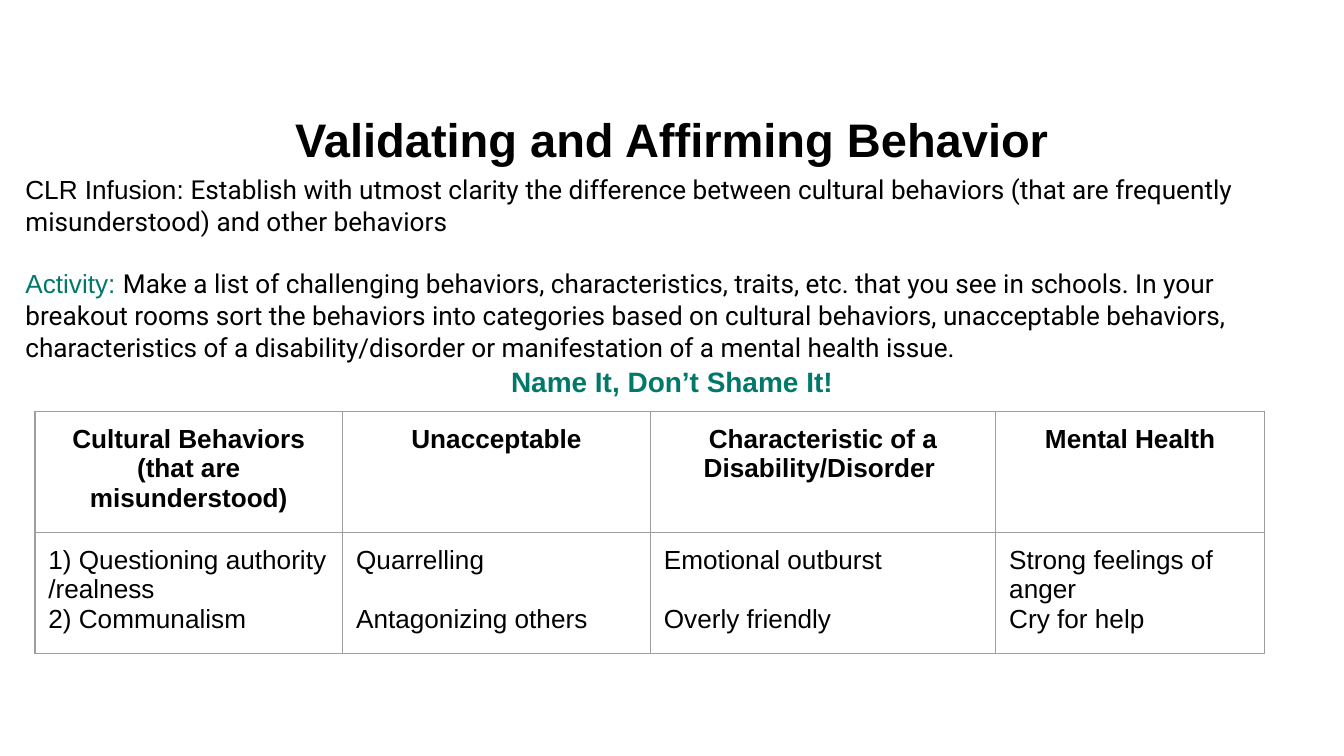
from lxml import etree
from pptx import Presentation
from pptx.dml.color import RGBColor
from pptx.enum.text import MSO_ANCHOR, MSO_AUTO_SIZE, PP_ALIGN
from pptx.oxml.ns import qn
from pptx.util import Inches, Pt

LEFT, MID = PP_ALIGN.LEFT, PP_ALIGN.CENTER
TOP = MSO_ANCHOR.TOP
FIXED = MSO_AUTO_SIZE.NONE
BLACK, TEAL, GREY = "000000", "00796B", "9E9E9E"
PAD = Inches(0.1)


def add_run(para, text, size=14, font="Arial", hue=BLACK, bold=False):
    run = para.add_run()
    run.text = text
    run.font.size, run.font.name, run.font.bold = Pt(size), font, bold
    run.font.color.rgb = RGBColor.from_string(hue)


def set_frame(frame):
    frame.word_wrap = True
    frame.auto_size = FIXED
    frame.vertical_anchor = TOP
    frame.margin_left = frame.margin_right = PAD
    frame.margin_top = frame.margin_bottom = PAD


deck = Presentation()
wide = Inches(10)
high = wide * 9 // 16
deck.slide_width, deck.slide_height = wide, high
slide = deck.slides.add_slide(deck.slide_layouts[5])

title = slide.shapes.title
title.left, title.width = Inches(0.34), Inches(9.32)
title.top, title.height = Inches(0.72), Inches(0.63)
set_frame(title.text_frame)
para = title.text_frame.paragraphs[0]
para.alignment = MID
add_run(para, "Validating and Affirming Behavior", 25.2, bold=True)

box = slide.shapes.add_textbox(
    Inches(0.09), Inches(1.18), Inches(9.82), Inches(4.34))
body = box.text_frame
set_frame(body)
para = body.paragraphs[0]
add_run(para, "CLR Infusion:")
add_run(para, " Establish with utmost clarity the difference between cultural "
        "behaviors (that are frequently misunderstood) and other behaviors",
        font="Roboto")
para = body.add_paragraph()
para.space_before = Pt(16)
add_run(para, "Activity: ", hue=TEAL)
add_run(para, "Make a list of challenging behaviors, characteristics, traits, "
        "etc. that you see in schools. In your breakout rooms sort the "
        "behaviors into categories based on cultural behaviors, unacceptable "
        "behaviors, characteristics of a disability/disorder or manifestation "
        "of a mental health issue.", font="Roboto")
para = body.add_paragraph()
para.alignment = MID
add_run(para, "Name It, Don’t Shame It!", 15, hue=TEAL, bold=True)
for para in body.paragraphs:
    para.line_spacing = 1.03

heads = [["Cultural Behaviors", "(that are misunderstood)"], ["Unacceptable"],
         ["Characteristic of a Disability/Disorder "], ["Mental Health"]]
traits = [["1) Questioning authority /realness", "2) Communalism"],
          ["Quarrelling", "Antagonizing others"],
          ["Emotional outburst", "Overly friendly"],
          ["Strong feelings of anger", "Cry for help"]]
gaps = [0, 16, 16, 0]
cols = [2.29, 2.29, 2.57, 2]
tall = 0.9

grid = slide.shapes.add_table(
    2, len(cols), Inches(0.26), Inches(3.06),
    Inches(sum(cols)), Inches(2 * tall)).table
grid.first_row = grid.horz_banding = False
for col, span in zip(grid.columns, cols):
    col.width = Inches(span)

for r, row in enumerate([heads, traits]):
    grid.rows[r].height = Inches(tall)
    for c, lines in enumerate(row):
        cell = grid.cell(r, c)
        cell.margin_left = cell.margin_right = PAD
        cell.margin_top = cell.margin_bottom = PAD
        cell.vertical_anchor = TOP
        for n, line in enumerate(lines):
            frame = cell.text_frame
            para = frame.add_paragraph() if n else frame.paragraphs[0]
            para.alignment = LEFT if r else MID
            if n and r and gaps[c]:
                para.space_before = Pt(gaps[c])
            add_run(para, line, bold=r == 0)
        cell.fill.background()
        props = cell._tc.get_or_add_tcPr()
        for n, side in enumerate(["lnL", "lnR", "lnT", "lnB"]):
            edge = etree.Element(qn("a:" + side), w=str(Pt(0.75)))
            fill = etree.SubElement(edge, qn("a:solidFill"))
            etree.SubElement(fill, qn("a:srgbClr"), val=GREY)
            props.insert(n, edge)

deck.save("out.pptx")
